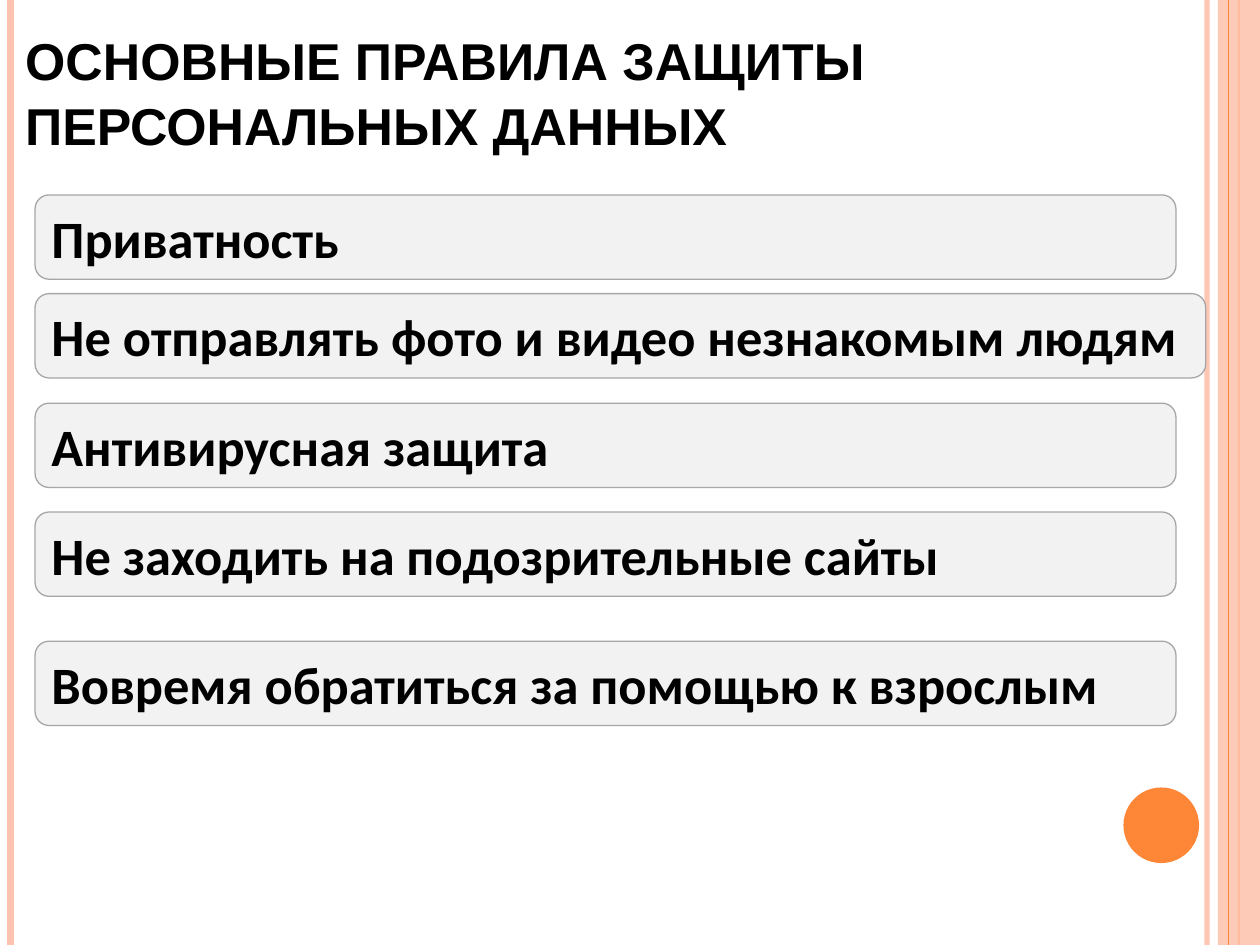
from dataclasses import dataclass

import pptx
import pptx.dml.color
import pptx.enum.shapes
import pptx.enum.text
import pptx.oxml.ns
import pptx.oxml.xmlchemy
import pptx.util
from lxml import etree

Pt = pptx.util.Pt
SHAPES = pptx.enum.shapes.MSO_SHAPE
ANCHOR = pptx.enum.text.MSO_ANCHOR
ALIGN = pptx.enum.text.PP_ALIGN
qn = pptx.oxml.ns.qn


@dataclass(frozen=True)
class Theme:
    """Colours, fonts and type sizes of the slide."""
    peach: str = "FEC3AE"
    orange: str = "FE8637"
    card: str = "F2F2F2"
    card_line: str = "A6A6A6"
    text: str = "000000"
    title_font: str = "Arial"
    rule_font: str = "Calibri"
    title_size: float = 29.6
    rule_size: float = 30


THEME = Theme()
WIDTH, HEIGHT = 720, 540


def rgb(color):
    """Turn a hex string into a colour."""
    return pptx.dml.color.RGBColor.from_string(color)


def set_opacity(element, percent):
    """Make the solid colour inside an element partly transparent."""
    color = element.find(".//" + qn("a:srgbClr"))
    etree.SubElement(color, qn("a:alpha")).set("val", str(percent * 1000))


def add_run(paragraph, text, font, size):
    """Add one bold run in the text colour."""
    run = paragraph.add_run()
    run.text = text
    run.font.name = font
    run.font.size = Pt(size)
    run.font.bold = True
    run.font.color.rgb = rgb(THEME.text)


def add_shape(slide, kind, box, fill, line=None):
    """Add a flat preset shape with an optional thin outline."""
    shape = slide.shapes.add_shape(kind, *map(Pt, box))
    shape.shadow.inherit = False
    shape.fill.solid()
    shape.fill.fore_color.rgb = rgb(fill)
    if line:
        shape.line.color.rgb = rgb(line)
        shape.line.width = Pt(0.75)
    else:
        shape.line.fill.background()
    return shape


def add_stripe(slide, x, top, height, color, width):
    """Add a vertical line and return it."""
    stripe = slide.shapes.add_connector(
        pptx.enum.shapes.MSO_CONNECTOR.STRAIGHT,
        Pt(x), Pt(top), Pt(x), Pt(top + height))
    stripe.line.color.rgb = rgb(color)
    stripe.line.width = Pt(width)
    etree.SubElement(stripe._element.spPr, qn("a:effectLst"))
    return stripe


def add_frame(slide, box):
    """Draw the edge stripes, the right band and the corner disc."""
    left, top, width, height = box
    right = left + width
    inner = add_stripe(slide, right - 30.24, top, height, THEME.peach, 3)
    set_opacity(inner._element.spPr, 93)
    add_stripe(slide, left + 6, top, height, THEME.peach, 4.5)
    add_stripe(slide, right - 12, top, height, THEME.orange, 1.5)
    band = add_shape(slide, SHAPES.RECTANGLE,
                     (right - 24, top, 24, height), THEME.peach)
    set_opacity(band._element.spPr, 87)
    add_stripe(slide, right - 18, top, height, THEME.orange, 0.75)
    add_shape(slide, SHAPES.OVAL,
              (right - 78, top + height - 90, 43.2, 43.2), THEME.orange)


def place_title(slide, box, text):
    """Move the title placeholder into its box and fill it."""
    title = slide.shapes.title
    title.left, title.top, title.width, title.height = map(Pt, box)
    frame = title.text_frame
    frame.word_wrap = True
    frame.auto_size = pptx.enum.text.MSO_AUTO_SIZE.NONE
    frame.vertical_anchor = ANCHOR.TOP
    frame.margin_left = frame.margin_top = 0
    frame.margin_right = frame.margin_bottom = 0
    paragraph = frame.paragraphs[0]
    paragraph.alignment = ALIGN.LEFT
    paragraph.line_spacing = 1.04
    add_run(paragraph, text, THEME.title_font, THEME.title_size)


def add_rule(slide, box, text):
    """Add one rounded card holding a rule."""
    card = add_shape(slide, SHAPES.ROUNDED_RECTANGLE, box,
                     THEME.card, THEME.card_line)
    frame = card.text_frame
    frame.word_wrap = True
    frame.vertical_anchor = ANCHOR.MIDDLE
    paragraph = frame.paragraphs[0]
    paragraph.alignment = ALIGN.LEFT
    paragraph.space_before = Pt(6)
    paragraph.space_after = Pt(6)
    properties = paragraph._p.get_or_add_pPr()
    properties.set("marL", str(Pt(7.2)))
    properties.set("indent", str(-Pt(7.2)))
    add_run(paragraph, text, THEME.rule_font, THEME.rule_size)


def add_rules(slide, box, rules):
    """Stack the rule cards at their offsets inside the box."""
    left, top, width, height = box
    for offset, extra_width, text in rules:
        add_rule(slide, (left, top + offset, width + extra_width, height), text)


def main():
    """Build the slide and save it."""
    presentation = pptx.Presentation()
    presentation.slide_width, presentation.slide_height = Pt(WIDTH), Pt(HEIGHT)
    slide = presentation.slides.add_slide(presentation.slide_layouts[5])
    add_frame(slide, (0, 0, WIDTH, HEIGHT))
    place_title(slide, (14.4, 15.12, 676, 67),
                "ОСНОВНЫЕ ПРАВИЛА ЗАЩИТЫ ПЕРСОНАЛЬНЫХ ДАННЫХ")
    add_rules(slide, (20, 111.4, 652, 48.2), (
        (0, 0, "Приватность"),
        (56.4, 17, "Не отправлять фото и видео незнакомым людям"),
        (119, 0, "Антивирусная защита"),
        (181.2, 0, "Не заходить на подозрительные сайты"),
        (255, 0, "Вовремя обратиться за помощью к взрослым"),
    ))
    presentation.save("out.pptx")


if __name__ == "__main__":
    main()
